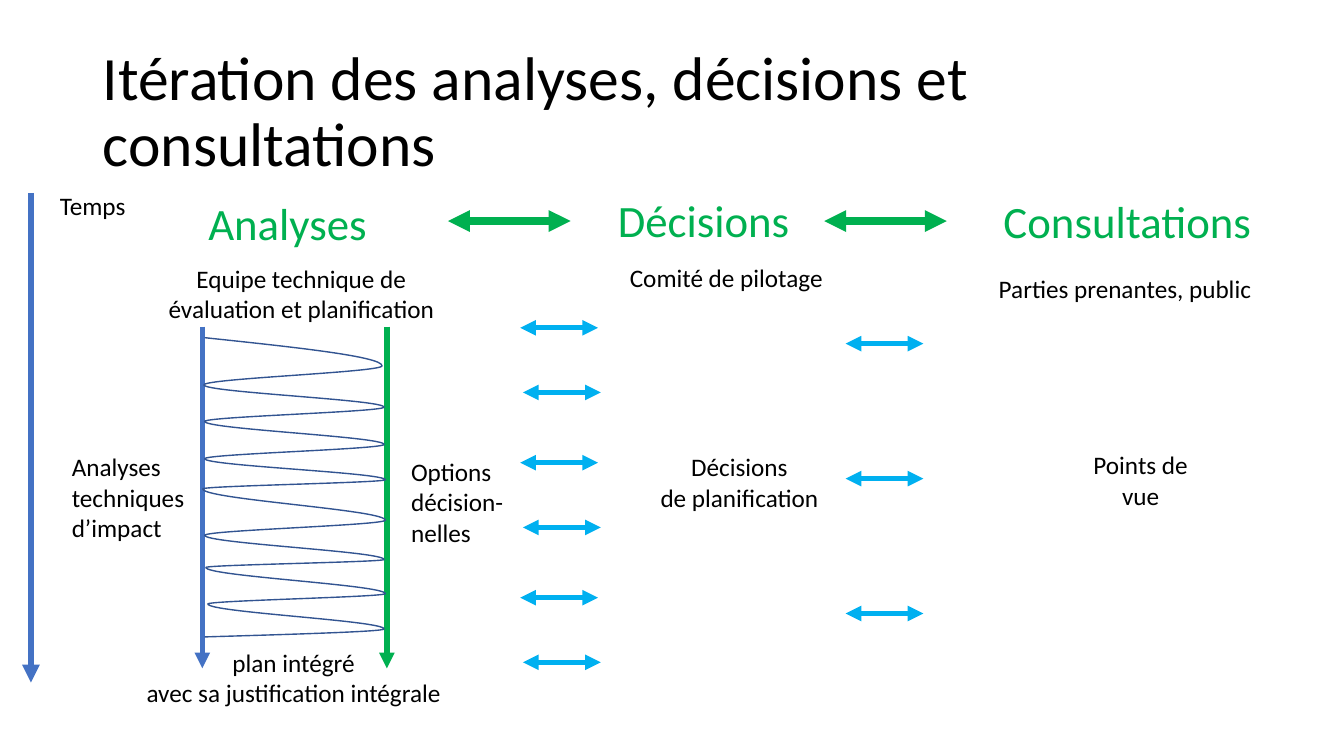
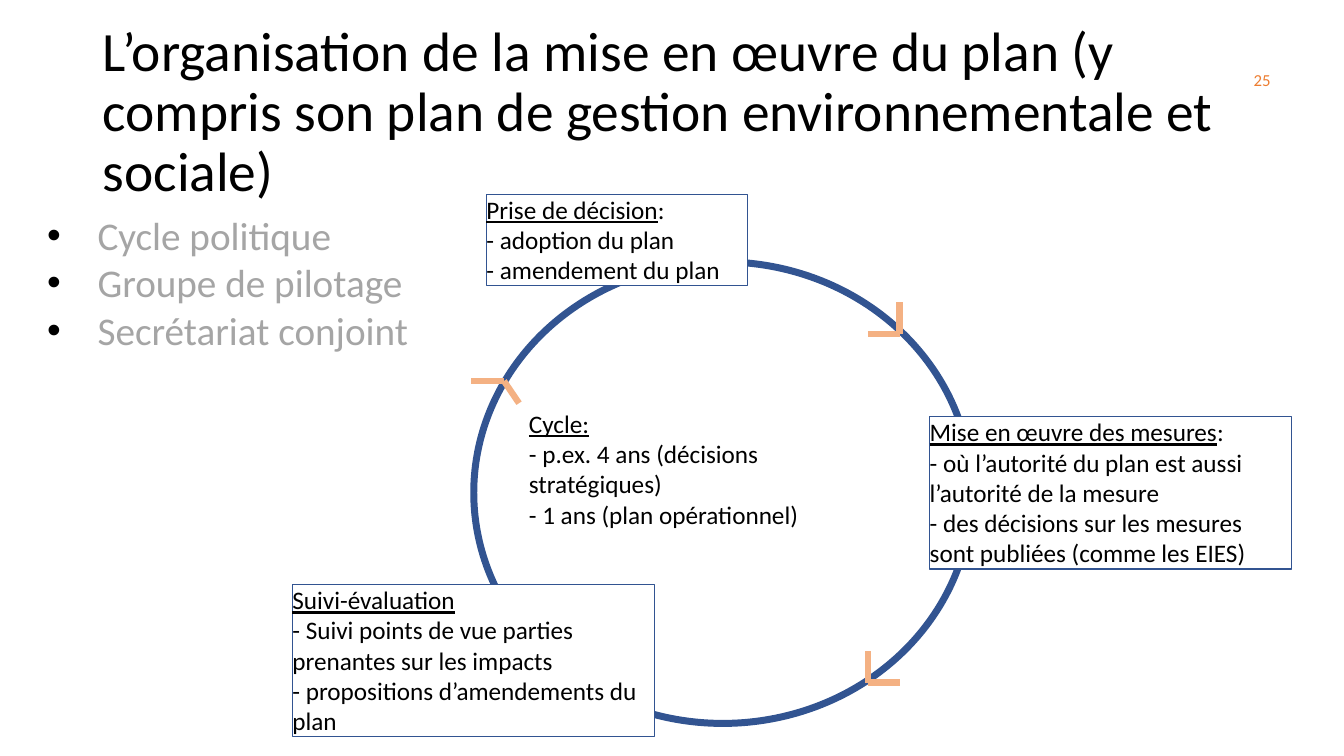
from collections import namedtuple
from itertools import pairwise

from lxml.etree import SubElement
from pptx import Presentation
from pptx.dml.color import RGBColor
from pptx.enum.shapes import MSO_CONNECTOR as Connector, MSO_SHAPE as Shape
from pptx.enum.text import MSO_ANCHOR as Anchor, MSO_AUTO_SIZE as AutoSize, PP_ALIGN as Align
from pptx.oxml.ns import qn
from pptx.util import Cm, Pt

FONT = "Calibri"
COLORS = {
    "text": "000000",
    "muted": "A5A5A5",
    "number": "ED7D31",
    "blue": "4472C4",
    "navy": "325491",
    "sky": "00B0F0",
    "green": "00B050",
    "peach": "F4B183",
    "paper": "FFFFFF",
}

Box = namedtuple("Box", "left top width height")  # centimetres
Style = namedtuple("Style", "size color align inset wrap grow")

INSET = (0.25, 0.13)
FLUSH = (0, 0)
STYLES = {
    "heading": Style(32, "green", Align.LEFT, INSET, False, True),
    "centered": Style(18, "text", Align.CENTER, FLUSH, False, True),
    "centered wrapped": Style(18, "text", Align.CENTER, FLUSH, True, True),
    "left": Style(18, "text", Align.LEFT, FLUSH, False, True),
    "left wrapped": Style(18, "text", Align.LEFT, FLUSH, True, True),
    "indented": Style(18, "text", Align.LEFT, INSET, False, True),
    "indented wrapped": Style(18, "text", Align.LEFT, INSET, True, True),
    "bullets": Style(28, "muted", Align.LEFT, FLUSH, True, False),
    "number": Style(12, "number", Align.RIGHT, FLUSH, True, False),
}

SLIDE_SIZE = (33.87, 19.05)
TITLE_BOX = Box(2.34, 1.02, 29.21, 3.68)

# Points where the curve between the two axes turns back
CURVE_TURNS = [
    (0.05, 0), (4.52, 0.71), (0.03, 1.19), (4.57, 1.75), (0.05, 2.11), (4.57, 2.69),
    (0.05, 3.05), (4.6, 3.58), (0, 3.81), (4.6, 4.6), (0.05, 4.98), (4.57, 5.59),
    (0.08, 5.79), (4.6, 6.45), (0.13, 6.71), (4.57, 7.34), (0.05, 7.54),
]

# A vertical tab breaks a line within its paragraph
ANALYSES_LABELS = [
    (["Equipe technique de", "évaluation et planification"],
     Box(2.08, 1.91, 7.37, 1.55), "centered"),
    (["plan intégré", "avec sa justification intégrale"],
     Box(1.47, 11.59, 8.2, 1.55), "centered"),
    (["Analyses\vtechniques", "d’impact"], Box(-0.02, 6.66, 3.28, 2.31), "left"),
    (["Options\vdécision-\vnelles"], Box(8.28, 6.65, 3.07, 2.57), "indented"),
    (["Analyses"], Box(3.17, 0.08, 5.13, 1.63), "heading"),
]
DECISIONS_LABELS = [
    (["Décisions\vde planification"], Box(1.18, 6.66, 4.27, 1.55), "centered"),
    (["Comité de pilotage"], Box(0.32, 1.88, 5.33, 0.76), "centered"),
    (["Décisions"], Box(0, 0, 5.46, 1.63), "heading"),
]
CONSULTATIONS_LABELS = [
    (["Parties prenantes, public"], Box(0.15, 2.16, 7.14, 0.76), "left wrapped"),
    (["Points de vue"], Box(2.34, 6.61, 2.77, 1.55), "centered wrapped"),
    (["Consultations"], Box(0.02, 0.03, 7.42, 1.63), "heading"),
]

CYCLE_MARKS = [
    [(-0.06, 3), (0.76, 3), (1.14, 3.56)],
    [(9.93, 1.81), (10.73, 1.81), (10.73, 1)],
    [(10.73, 10.6), (9.93, 10.6), (9.93, 9.8)],
]
# Heading, rest of its paragraph line by line, box, style
CYCLE_NOTES = [
    ("Suivi-évaluation",
     ["", "- Suivi points de vue parties prenantes sur les impacts",
      "- propositions d’amendements du plan"],
     Box(-4.57, 8.13, 9.12, 3.84), "left wrapped"),
    ("Mise en œuvre des mesures",
     [":", "- où l’autorité du plan est aussi ", "l’autorité de la mesure",
      "- des décisions sur les mesures", "sont publiées (comme les EIES)"],
     Box(11.49, 3.9, 9.12, 3.84), "left"),
    ("Prise de décision", [":", "- adoption du plan", "- amendement du plan"],
     Box(0.32, -1.71, 6.58, 2.31), "left"),
]


def rgb(name):
    return RGBColor.from_string(COLORS[name])


def within(region, box):
    """Turn a box relative to a region into one on the slide."""
    return Box(region.left + box.left, region.top + box.top, box.width, box.height)


def in_cm(lengths):
    return [Cm(length) for length in lengths]


def format_runs(paragraph, size, color):
    for run in paragraph.runs:
        run.font.name = FONT
        run.font.size = Pt(size)
        run.font.color.rgb = rgb(color)


def fill_text(shape, paragraphs, style, anchor=Anchor.TOP):
    frame = shape.text_frame
    frame.text = "\n".join(paragraphs)
    frame.word_wrap = style.wrap
    frame.auto_size = AutoSize.SHAPE_TO_FIT_TEXT if style.grow else AutoSize.NONE
    frame.vertical_anchor = anchor
    frame.margin_left = frame.margin_right = Cm(style.inset[0])
    frame.margin_top = frame.margin_bottom = Cm(style.inset[1])
    for paragraph in frame.paragraphs:
        paragraph.alignment = style.align
        format_runs(paragraph, style.size, style.color)


def add_text(parent, paragraphs, box, style, anchor=Anchor.TOP):
    shape = parent.shapes.add_textbox(*in_cm(box))
    fill_text(shape, paragraphs, style, anchor)
    return shape


def add_title(slide, title, size):
    style = Style(size, "text", Align.LEFT, INSET, True, False)
    shape = add_text(slide, [title], TITLE_BOX, style, Anchor.MIDDLE)
    shape.text_frame.paragraphs[0].line_spacing = 0.9


def add_labels(slide, region, labels):
    for paragraphs, box, style in labels:
        add_text(slide, paragraphs, within(region, box), STYLES[style])


def set_outline(shape, color, width):
    shape.line.color.rgb = rgb(color)
    shape.line.width = Pt(width)


def add_line(parent, start, end, color, width, ends=()):
    """Draw a straight line; ends names the ends that carry an arrowhead."""
    line = parent.shapes.add_connector(Connector.STRAIGHT, *in_cm((*start, *end)))
    set_outline(line, color, width)
    outline = line.line._get_or_add_ln()
    for end_name in ends:
        SubElement(outline, qn(f"a:{end_name}"), type="triangle")
    SubElement(line._element.spPr, qn("a:effectLst"))


def add_down_arrow(slide, left, top, height, color, width):
    add_line(slide, (left, top), (left, top + height), color, width, ["tailEnd"])


def add_double_arrow(parent, left, top, length, color, width):
    add_line(parent, (left, top), (left + length, top), color, width,
             ["headEnd", "tailEnd"])


def add_exchange_arrows(slide, left, top):
    """Group three double arrows at an equal pitch."""
    group = slide.shapes.add_group_shape()
    for row in range(3):
        add_double_arrow(group, left, top + 3.4 * row, 1.96, "sky", 3.75)


def add_iteration_curve(slide, left, top):
    """Join the turns by Bézier curves that are vertical at each turn."""
    turns = [(Cm(x), Cm(y)) for x, y in CURVE_TURNS]
    builder = slide.shapes.build_freeform(*turns[0])
    builder.add_line_segments(turns[1:], close=False)
    curve = builder.convert_to_shape(Cm(left), Cm(top))
    curve.shadow.inherit = False
    curve.fill.background()
    set_outline(curve, "navy", 1)
    segments = list(curve._element.iter(qn("a:lnTo")))
    for index, (start, end) in enumerate(pairwise(turns)):
        middle = (start[0] + end[0]) // 2
        third = (end[1] - start[1]) // 3
        leaving = (middle if index == 0 else start[0], start[1] + third)
        arriving = (middle if index == len(segments) - 1 else end[0], end[1] - third)
        segment = segments[index]
        segment.tag = qn("a:cubicBezTo")
        for point in list(segment):
            segment.remove(point)
        for x, y in (leaving, arriving, end):
            SubElement(segment, qn("a:pt"), x=str(x), y=str(y))


def add_time_axis(slide, region):
    add_down_arrow(slide, region.left, region.top, region.height, "blue", 4.25)
    label_box = within(region, Box(0.17, -0.06, 2.77, 0.76))
    add_text(slide, ["Temps"], label_box, STYLES["centered wrapped"])


def add_analyses(slide, region):
    axis_top = region.top + 3.51
    for offset, color in ((3.27, "blue"), (7.92, "green")):
        add_down_arrow(slide, region.left + offset, axis_top, 8.61, color, 3.75)
    add_iteration_curve(slide, region.left + 3.28, region.top + 3.79)
    add_labels(slide, region, ANALYSES_LABELS)


def add_bullets(slide, lines, box):
    shape = add_text(slide, lines, box, STYLES["bullets"])
    for paragraph in shape.text_frame.paragraphs:
        paragraph.line_spacing = 1.01
        properties = paragraph._p.get_or_add_pPr()
        properties.set("marL", str(Cm(1.27)))
        properties.set("indent", str(-Cm(1.27)))
        bullet_color = SubElement(properties, qn("a:buClr"))
        SubElement(bullet_color, qn("a:srgbClr"), val=COLORS["text"])
        SubElement(properties, qn("a:buFont"), typeface="Arial")
        SubElement(properties, qn("a:buChar"), char="•")


def extend_heading(shape, lines):
    """Underline the first paragraph, then continue it with plain lines."""
    paragraph = shape.text_frame.paragraphs[0]
    paragraph.runs[0].font.underline = True
    for index, line in enumerate(lines):
        if index:
            paragraph.add_line_break()
        if line:
            paragraph.add_run().text = line
    format_runs(paragraph, 18, "text")


def add_note(slide, heading, lines, box, style):
    note = slide.shapes.add_shape(Shape.RECTANGLE, *in_cm(box))
    note.shadow.inherit = False
    note.fill.solid()
    note.fill.fore_color.rgb = rgb("paper")
    set_outline(note, "navy", 0.75)
    fill_text(note, [heading], STYLES[style])
    extend_heading(note, lines)


def add_cycle(slide, region):
    """Draw the ring over the whole region, with its marks and notes."""
    group = slide.shapes.add_group_shape()
    durations = add_text(group, ["Cycle:", "- 1 ans (plan opérationnel)"],
                         within(region, Box(1.14, 3.56, 9.58, 3.33)),
                         STYLES["indented wrapped"])
    extend_heading(durations, ["", "- p.ex. 4 ans (décisions stratégiques)"])
    ring = group.shapes.add_shape(Shape.OVAL, *in_cm(region))
    ring.shadow.inherit = False
    ring.fill.background()
    set_outline(ring, "navy", 5)
    for mark in CYCLE_MARKS:
        corners = [(region.left + x, region.top + y) for x, y in mark]
        for start, end in pairwise(corners):
            add_line(group, start, end, "peach", 4.5)
    for heading, lines, box, style in CYCLE_NOTES:
        add_note(slide, heading, lines, within(region, box), style)


def build_iteration_slide(slide):
    add_title(slide, "Itération des analyses, décisions et consultations", 44)
    add_analyses(slide, Box(1.83, 4.72, 11.35, 13.14))
    add_labels(slide, Box(15.32, 4.72, 5.63, 8.21), DECISIONS_LABELS)
    add_labels(slide, Box(25.02, 4.72, 7.42, 8.16), CONSULTATIONS_LABELS)
    for left, top in ((13.11, 8.26), (21.31, 8.66), (13.18, 9.89)):
        add_exchange_arrows(slide, left, top)
    add_time_axis(slide, Box(0.78, 4.86, 2.95, 12.34))
    for left in (11.29, 20.77):
        add_double_arrow(slide, left, 5.57, 3.09, "green", 5.25)


def build_organisation_slide(slide):
    add_title(slide, "L’organisation de la mise en œuvre du plan (y compris son "
                     "plan de gestion environnementale et sociale)", 39.6)
    add_bullets(slide, ["Cycle politique", "Groupe de pilotage", "Secrétariat conjoint"],
                Box(1.19, 5.31, 29.06, 12.29))
    add_text(slide, ["25"], Box(30.93, 1.5, 1.09, 1.02), STYLES["number"], Anchor.MIDDLE)
    add_cycle(slide, Box(11.94, 6.6, 12.55, 11.63))


def main():
    presentation = Presentation()
    presentation.slide_width, presentation.slide_height = in_cm(SLIDE_SIZE)
    blank = presentation.slide_layouts[6]
    for build in (build_iteration_slide, build_organisation_slide):
        build(presentation.slides.add_slide(blank))
    presentation.save("out.pptx")


if __name__ == "__main__":
    main()
